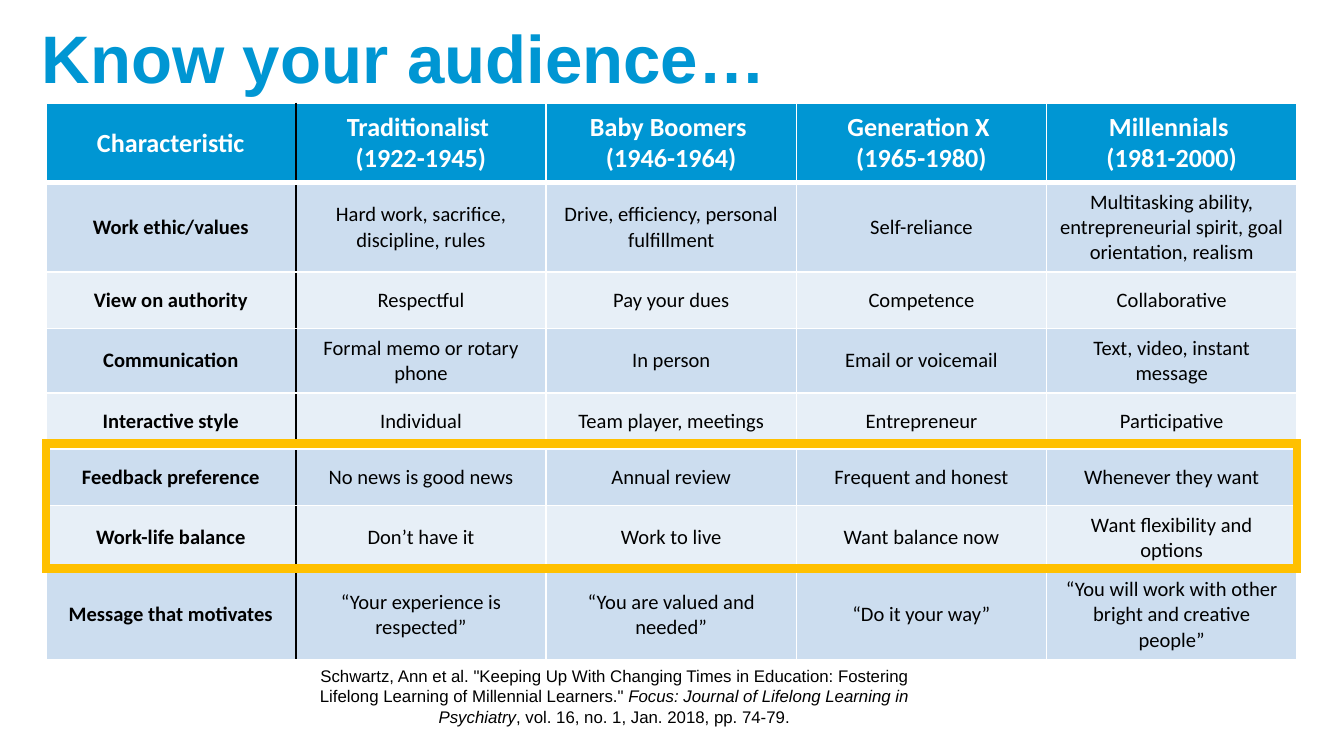
from lxml import etree
from pptx import Presentation
from pptx.dml.color import RGBColor
from pptx.enum import shapes, text
from pptx.oxml.ns import qn
from pptx.util import Inches, Pt

BLUE = RGBColor(0x00, 0x96, 0xD3)
BAND = RGBColor(0xCC, 0xDD, 0xEF)
PALE = RGBColor(0xE7, 0xEF, 0xF7)
GOLD = RGBColor(0xFF, 0xC0, 0x00)
WHITE = RGBColor(0xFF, 0xFF, 0xFF)
BLACK = RGBColor(0x00, 0x00, 0x00)

# Content
TITLE = "Know your audience…"
HEADS = ["Characteristic", "Traditionalist \n(1922-1945)", "Baby Boomers \n(1946-1964)",
         "Generation X \n(1965-1980)", "Millennials \n(1981-2000)"]
TRAITS = [
    ["Work ethic/values", "Hard work, sacrifice, discipline, rules",
     "Drive, efficiency, personal fulfillment", "Self-reliance",
     "Multitasking ability, entrepreneurial spirit, goal orientation, realism"],
    ["View on authority", "Respectful", "Pay your dues", "Competence", "Collaborative"],
    ["Communication", "Formal memo or rotary phone", "In person", "Email or voicemail",
     "Text, video, instant message"],
    ["Interactive style", "Individual", "Team player, meetings", "Entrepreneur",
     "Participative"],
    ["Feedback preference", "No news is good news", "Annual review",
     "Frequent and honest", "Whenever they want"],
    ["Work-life balance", "Don’t have it", "Work to live", "Want balance now",
     "Want flexibility and options"],
    ["Message that motivates", "“Your experience is respected”",
     "“You are valued and needed”", "“Do it your way”",
     "“You will work with other bright and creative people”"],
]
# Every second part is italic
SOURCE = [
    'Schwartz, Ann et al. "Keeping Up With Changing Times in Education: '
    'Fostering Lifelong Learning of Millennial Learners."\u00a0',
    "Focus: Journal of Lifelong Learning in Psychiatry",
    ", vol. 16, no. 1, Jan. 2018, pp. 74-79.",
]
LEFT, TOP, WIDTH = 0.34, 0.77, 9.31
ROWS = [0.59] + [0.42] * 6 + [0.59]


def write(frame, parts, size, color=BLACK, font="Calibri", bold=False,
          align=text.PP_ALIGN.CENTER):
    """Fill a frame; a line break in a part starts a new paragraph."""
    frame.word_wrap = True
    frame.vertical_anchor = text.MSO_ANCHOR.MIDDLE
    para = frame.paragraphs[0]
    para.alignment = align
    for i, part in enumerate(parts):
        for j, line in enumerate(part.split("\n")):
            if j:
                para = frame.add_paragraph()
                para.alignment = align
            run = para.add_run()
            run.text = line
            face = run.font
            face.name, face.size, face.bold = font, Pt(size), bold
            face.italic = i % 2 == 1
            face.color.rgb = color


def border(cell, side, color, width):
    props = cell._tc.get_or_add_tcPr()
    line = etree.SubElement(props, qn("a:ln" + side), w=str(Pt(width)))
    fill = etree.SubElement(line, qn("a:solidFill"))
    etree.SubElement(fill, qn("a:srgbClr"), val=str(color))


# Widescreen page, 16 to 9
deck = Presentation()
deck.slide_width = Inches(10)
deck.slide_height = deck.slide_width * 9 // 16
slide = deck.slides.add_slide(deck.slide_layouts[5])

# Title
title = slide.shapes.title
title.left, title.top = Inches(0.21), Inches(0.13)
title.width, title.height = Inches(8.62), Inches(0.66)
write(title.text_frame, [TITLE], 36, BLUE, "Arial", True, text.PP_ALIGN.LEFT)
title.text_frame.auto_size = text.MSO_AUTO_SIZE.NONE
title.text_frame.paragraphs[0].line_spacing = 0.9

# Generations table
grid = [HEADS] + TRAITS
table = slide.shapes.add_table(len(grid), len(HEADS), Inches(LEFT), Inches(TOP),
                               Inches(WIDTH), Inches(sum(ROWS))).table
for row, high in zip(table.rows, ROWS):
    row.height = Inches(high)
for r, words in enumerate(grid):
    for c, word in enumerate(words):
        cell = table.cell(r, c)
        border(cell, "L", BLACK if c == 1 else WHITE, 1)
        border(cell, "R", BLACK if c == 0 else WHITE, 1)
        border(cell, "T", WHITE, 3 if r == 1 else 1)
        border(cell, "B", WHITE, 3 if r == 0 else 1)
        cell.fill.solid()
        cell.fill.fore_color.rgb = BLUE if r == 0 else BAND if r % 2 else PALE
        write(cell.text_frame, [word], 11 if r else 14, BLACK if r else WHITE,
              bold=r == 0 or c == 0)
        cell.vertical_anchor = text.MSO_ANCHOR.MIDDLE

# Citation
note = slide.shapes.add_textbox(Inches(2.07), Inches(4.9), Inches(5), Inches(0.56))
write(note.text_frame, SOURCE, 9, font="Arial")
note.text_frame.auto_size = text.MSO_AUTO_SIZE.SHAPE_TO_FIT_TEXT

# Square-cornered frame around the feedback and balance rows
frame = slide.shapes.add_shape(shapes.MSO_SHAPE.RECTANGLE, Inches(LEFT), Inches(3.3),
                               Inches(WIDTH), Inches(0.93))
frame.shadow.inherit = False
frame.fill.background()
frame.line.color.rgb = GOLD
frame.line.width = Pt(4.5)
etree.SubElement(frame.line._get_or_add_ln(), qn("a:miter"), lim="800000")

deck.save("out.pptx")
